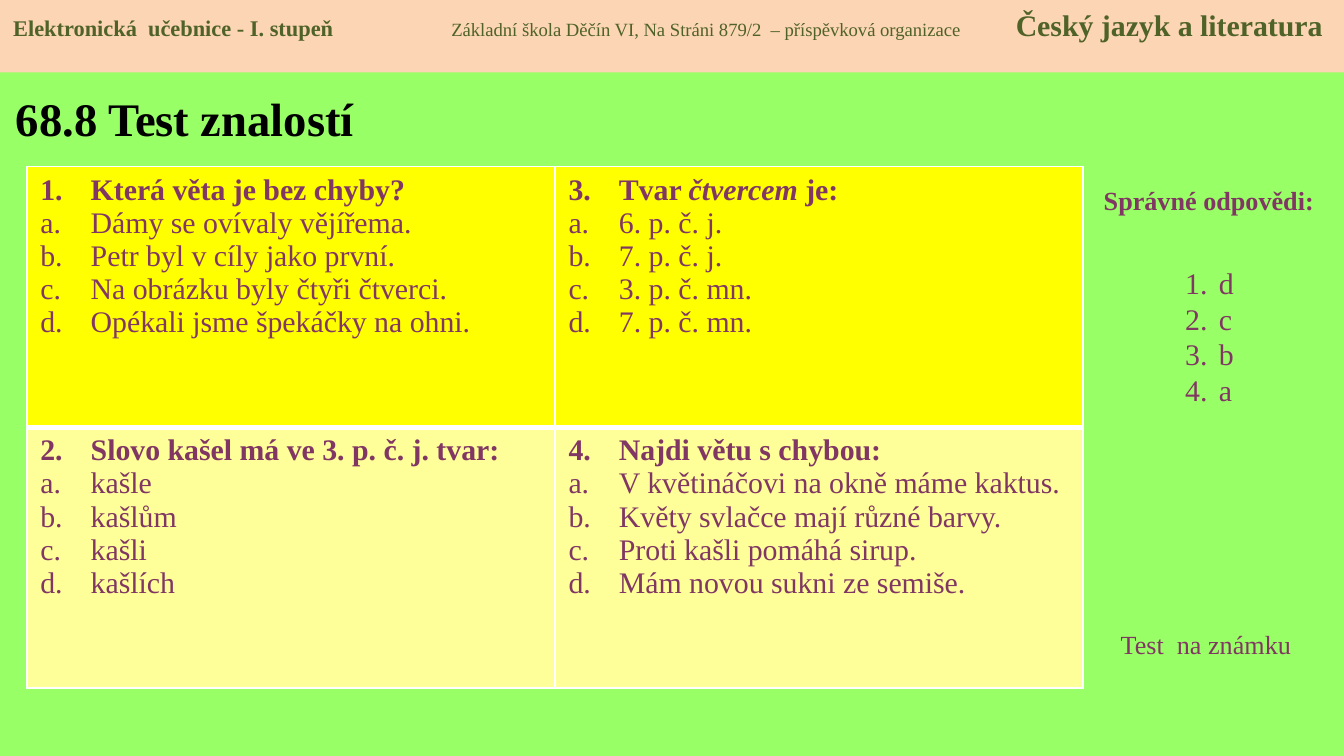
from lxml.etree import SubElement
from pptx import Presentation
from pptx.dml.color import RGBColor
from pptx.enum.shapes import MSO_SHAPE
from pptx.enum.text import MSO_ANCHOR, PP_ALIGN
from pptx.oxml.ns import qn
from pptx.util import Inches, Pt

GREEN = RGBColor(0x99, 0xFF, 0x66)
PEACH = RGBColor(0xFC, 0xD5, 0xB5)
OLIVE = RGBColor(0x4F, 0x62, 0x28)
PLUM = RGBColor(0x81, 0x37, 0x63)
BLACK = RGBColor(0, 0, 0)
WHITE = RGBColor(0xFF, 0xFF, 0xFF)
YELLOW = RGBColor(0xFF, 0xFF, 0)
PALE_YELLOW = RGBColor(0xFF, 0xFF, 0x99)

presentation = Presentation()
presentation.slide_width = Inches(10)
presentation.slide_height = Inches(10) * 9 // 16
slide = presentation.slides.add_slide(presentation.slide_layouts[6])
slide.background.fill.solid()
slide.background.fill.fore_color.rgb = GREEN

# Grid of one hundred columns and one hundred rows
column = presentation.slide_width / 100
row = presentation.slide_height / 100


def add_run(paragraph, text, size, color=PLUM, bold=False, italic=False):
    run = paragraph.add_run()
    run.text = text
    font = run.font
    font.name, font.size, font.bold, font.italic = "Times New Roman", Pt(size), bold, italic
    font.color.rgb = color


def number_paragraph(paragraph, scheme, indent, start=1):
    properties = paragraph._p.get_or_add_pPr()
    properties.set("marL", str(int(indent * column)))
    properties.set("indent", str(int(-indent * column)))
    SubElement(properties, qn("a:buFont"), typeface="+mj-lt")
    SubElement(properties, qn("a:buAutoNum"), type=scheme, startAt=str(start))


# Title and side labels
labels = [
    ("68.8 Test znalostí", 0.2, 9.8, 31.9, 11.6, 25, BLACK, True, PP_ALIGN.LEFT, MSO_ANCHOR.MIDDLE),
    ("Správné odpovědi:", 80.5, 23.5, 18.9, 6, 14, PLUM, True, PP_ALIGN.CENTER, MSO_ANCHOR.TOP),
    ("Test  na známku", 82.4, 82.3, 15.7, 6, 14, PLUM, False, PP_ALIGN.LEFT, MSO_ANCHOR.TOP),
]
for text, left, top, width, height, size, color, bold, alignment, anchor in labels:
    box = slide.shapes.add_textbox(
        int(left * column), int(top * row), int(width * column), int(height * row))
    box.text_frame.word_wrap = True
    box.text_frame.vertical_anchor = anchor
    paragraph = box.text_frame.paragraphs[0]
    paragraph.alignment = alignment
    add_run(paragraph, text, size, color, bold)

# Questions, in reading order of the table cells: number, heading parts, choices
questions = [
    (1, ["Která věta je bez chyby?"],
     ["Dámy se ovívaly vějířema.", "Petr byl v cíly jako první.",
      "Na obrázku byly čtyři čtverci.", "Opékali jsme špekáčky na ohni."]),
    (3, ["Tvar ", "čtvercem ", "je:"],
     ["6. p. č. j.", "7. p. č. j.", "3. p. č. mn.", "7. p. č. mn."]),
    (2, ["Slovo kašel má ve 3. p. č. j. tvar:"],
     ["kašle", "kašlům", "kašli", "kašlích"]),
    (4, ["Najdi větu s chybou:"],
     ["V květináčovi na okně máme kaktus.", "Květy svlačce mají různé barvy.",
      "Proti kašli pomáhá sirup.", "Mám novou sukni ze semiše."]),
]
table = slide.shapes.add_table(
    2, 2, int(2 * column), int(22.04 * row), int(78.6 * column), int(69 * row)).table
table.first_row = table.horz_banding = False

for index, (number, heading, choices) in enumerate(questions):
    row_index, column_index = divmod(index, 2)
    cell = table.cell(row_index, column_index)

    # White borders, thicker between the two rows
    thick_side = "a:lnT" if row_index else "a:lnB"
    for side in ("a:lnL", "a:lnR", "a:lnT", "a:lnB"):
        border = SubElement(cell._tc.get_or_add_tcPr(), qn(side),
                            w=str(Pt(3 if side == thick_side else 1)))
        SubElement(SubElement(border, qn("a:solidFill")), qn("a:srgbClr"), val=str(WHITE))
    cell.fill.solid()
    cell.fill.fore_color.rgb = PALE_YELLOW if row_index else YELLOW

    # Numbered heading with lettered choices
    paragraph = cell.text_frame.paragraphs[0]
    number_paragraph(paragraph, "arabicPeriod", 3.75, number)
    for part_index, part in enumerate(heading):
        add_run(paragraph, part, 16, bold=True, italic=part_index == 1)
    for choice in choices:
        paragraph = cell.text_frame.add_paragraph()
        number_paragraph(paragraph, "alphaLcPeriod", 3.75)
        add_run(paragraph, choice, 16)

# Correct answers
answers = slide.shapes.add_textbox(
    int(87.2 * column), int(29.3 * row), int(5.5 * column), int(35.4 * row)).text_frame
answers.word_wrap = True
answers.margin_top = int(5.8 * row)
for index, answer in enumerate("dcba"):
    paragraph = answers.add_paragraph() if index else answers.paragraphs[0]
    paragraph.line_spacing = Pt(19)
    number_paragraph(paragraph, "arabicPeriod", 2.5)
    add_run(paragraph, answer, 16)

# Header band with its three parts set on tab stops
header = slide.shapes.add_shape(
    MSO_SHAPE.RECTANGLE, 0, 0, presentation.slide_width, int(9.6 * row))
header.shadow.inherit = False
header.fill.solid()
header.fill.fore_color.rgb = PEACH
header.line.fill.background()
header.text_frame.word_wrap = True
header.text_frame.vertical_anchor = MSO_ANCHOR.TOP
paragraph = header.text_frame.paragraphs[0]
paragraph.alignment = PP_ALIGN.LEFT
tab_stops = SubElement(paragraph._p.get_or_add_pPr(), qn("a:tabLst"))
for position in (32.6, 74.6):
    SubElement(tab_stops, qn("a:tab"), pos=str(int(position * column)), algn="l")
add_run(paragraph, "Elektronická  učebnice - I. stupeň\t", 12, OLIVE, bold=True)
add_run(paragraph, "Základní škola Děčín VI, Na Stráni 879/2  – příspěvková organizace\t", 10, OLIVE)
add_run(paragraph, "Český jazyk a literatura", 16, OLIVE, bold=True)

presentation.save("out.pptx")
